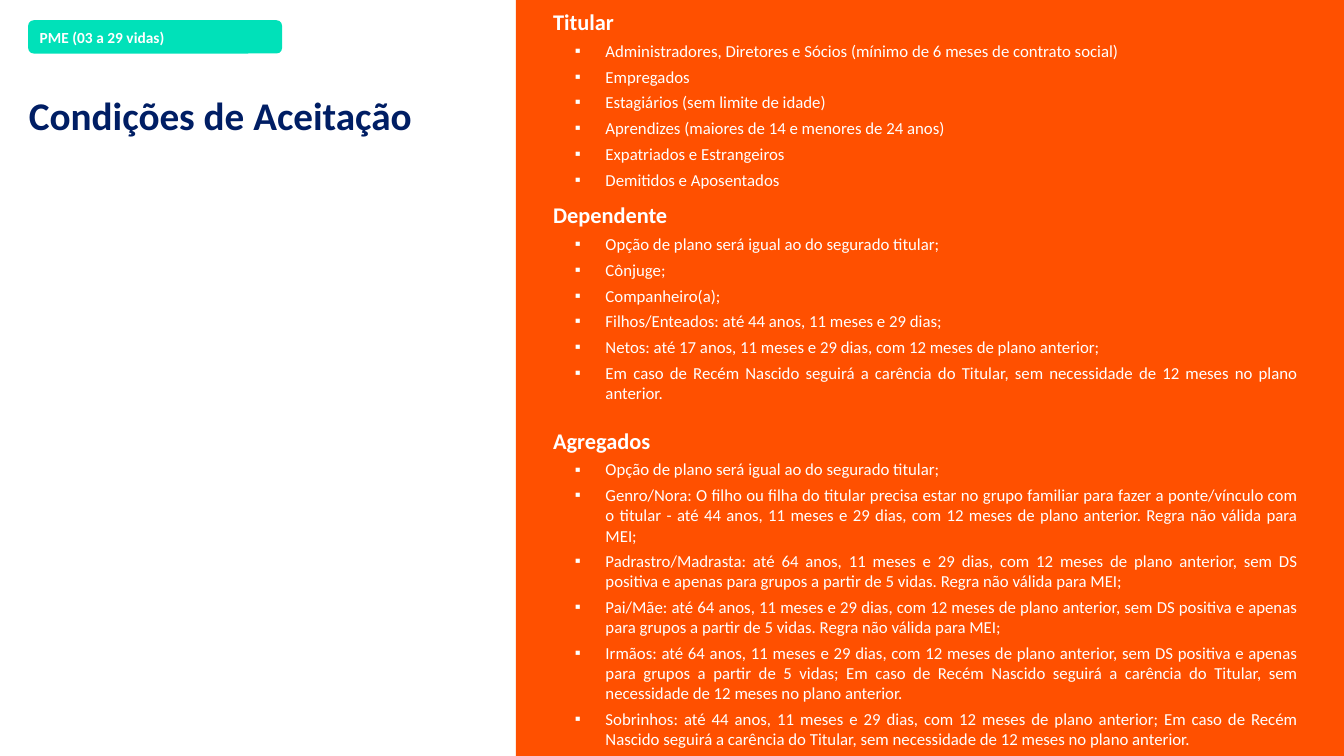
from dataclasses import dataclass

from lxml.etree import SubElement
from pptx import Presentation
from pptx.dml.color import RGBColor
from pptx.enum.shapes import MSO_SHAPE
from pptx.enum.text import MSO_ANCHOR, PP_ALIGN
from pptx.oxml.ns import qn
from pptx.util import Cm, Pt


@dataclass(frozen=True)
class Theme:
    font: str = "Calibri"
    navy: str = "001E64"
    orange: str = "FF5000"
    teal: str = "00E1B9"
    white: str = "FFFFFF"
    title_size: int = 28
    heading_size: int = 16
    body_size: int = 12
    badge_size: int = 11


HOLDER = ("Titular", [
    "Administradores, Diretores e Sócios (mínimo de 6 meses de contrato social)",
    "Empregados",
    "Estagiários (sem limite de idade)",
    "Aprendizes (maiores de 14 e menores de 24 anos)",
    "Expatriados e Estrangeiros",
    "Demitidos e Aposentados",
])
DEPENDENT = ("Dependente", [
    "Opção de plano será igual ao do segurado titular;",
    "Cônjuge;",
    "Companheiro(a);",
    "Filhos/Enteados: até 44 anos, 11 meses e 29 dias;",
    "Netos: até 17 anos, 11 meses e 29 dias, com 12 meses de plano anterior;",
    "Em caso de Recém Nascido seguirá a carência do Titular, sem necessidade de 12 meses "
    "no plano anterior.",
])
AGGREGATE = ("Agregados", [
    "Opção de plano será igual ao do segurado titular;",
    "Genro/Nora: O filho ou filha do titular precisa estar no grupo familiar para fazer a "
    "ponte/vínculo com o titular - até 44 anos, 11 meses e 29 dias, com 12 meses de plano "
    "anterior. Regra não válida para MEI;",
    "Padrastro/Madrasta: até 64 anos, 11 meses e 29 dias, com 12 meses de plano anterior, "
    "sem DS positiva e apenas para grupos a partir de 5 vidas. Regra não válida para MEI;",
    "Pai/Mãe: até 64 anos, 11 meses e 29 dias, com 12 meses de plano anterior, sem DS "
    "positiva e apenas para grupos a partir de 5 vidas. Regra não válida para MEI;",
    "Irmãos: até 64 anos, 11 meses e 29 dias, com 12 meses de plano anterior, sem DS "
    "positiva e apenas para grupos a partir de 5 vidas; Em caso de Recém Nascido seguirá a "
    "carência do Titular, sem necessidade de 12 meses no plano anterior.",
    "Sobrinhos: até 44 anos, 11 meses e 29 dias, com 12 meses de plano anterior; Em caso de "
    "Recém Nascido seguirá a carência do Titular, sem necessidade de 12 meses no plano "
    "anterior.",
])


class SlideBuilder:
    def __init__(self, page, theme):
        self.page = page
        self.theme = theme

    def style(self, paragraph, size, color, bold=False):
        font = paragraph.font
        font.name = self.theme.font
        font.size = Pt(size)
        font.bold = bold
        font.color.rgb = RGBColor.from_string(color)

    def shape(self, kind, left, top, width, height, color):
        shape = self.page.shapes.add_shape(kind, Cm(left), Cm(top), Cm(width), Cm(height))
        shape.shadow.inherit = False
        shape.fill.solid()
        shape.fill.fore_color.rgb = RGBColor.from_string(color)
        shape.line.fill.background()
        return shape

    def text_frame(self, left, top, width, height):
        box = self.page.shapes.add_textbox(Cm(left), Cm(top), Cm(width), Cm(height))
        box.text_frame.word_wrap = True
        return box.text_frame

    def title(self, text, left, top, width, height):
        paragraph = self.text_frame(left, top, width, height).paragraphs[0]
        paragraph.text = text
        paragraph.line_spacing = 0.9
        self.style(paragraph, self.theme.title_size, self.theme.navy, bold=True)

    def badge(self, text, left, top, width, height):
        shape = self.shape(MSO_SHAPE.ROUNDED_RECTANGLE, left, top, width, height, self.theme.teal)
        shape.text_frame.vertical_anchor = MSO_ANCHOR.MIDDLE
        paragraph = shape.text_frame.paragraphs[0]
        paragraph.text = text
        paragraph.alignment = PP_ALIGN.LEFT
        self.style(paragraph, self.theme.badge_size, self.theme.white, bold=True)

    def bullet(self, paragraph):
        paragraph.level = 1
        properties = paragraph._p.get_or_add_pPr()
        properties.set("marL", str(Cm(1.32)))
        properties.set("indent", str(-Cm(0.77)))
        color = SubElement(properties, qn("a:buClr"))
        SubElement(color, qn("a:srgbClr"), val=self.theme.white)
        SubElement(properties, qn("a:buFont"), typeface="Arial")
        SubElement(properties, qn("a:buChar"), char="▪")

    def sections(self, groups, left, top, width, height):
        """Stack headed bullet lists in one text box."""
        frame = self.text_frame(left, top, width, height)
        for number, (heading, items) in enumerate(groups):
            paragraph = frame.add_paragraph() if number else frame.paragraphs[0]
            paragraph.text = heading
            paragraph.alignment = PP_ALIGN.JUSTIFY
            if number:
                paragraph.space_before = Pt(17)
            self.style(paragraph, self.theme.heading_size, self.theme.white, bold=True)
            for item in items:
                paragraph = frame.add_paragraph()
                paragraph.text = item
                self.bullet(paragraph)
                paragraph.alignment = PP_ALIGN.JUSTIFY
                paragraph.space_before = Pt(4)
                self.style(paragraph, self.theme.body_size, self.theme.white)


def main():
    deck = Presentation()
    deck.slide_width, deck.slide_height = Cm(33.87), Cm(19.05)
    theme = Theme()
    builder = SlideBuilder(deck.slides.add_slide(deck.slide_layouts[6]), theme)

    builder.shape(MSO_SHAPE.RECTANGLE, 13, 0, 20.87, 19.05, theme.orange)
    builder.title("Condições de Aceitação", 0.48, 2.31, 14.1, 1.35)
    builder.badge("PME (03 a 29 vidas)", 0.71, 0.51, 6.4, 0.84)
    builder.sections([HOLDER], 13.69, 0.08, 19.28, 4.88)
    builder.sections([DEPENDENT, AGGREGATE], 13.69, 4.95, 19.28, 14.22)
    deck.save("out.pptx")


if __name__ == "__main__":
    main()
